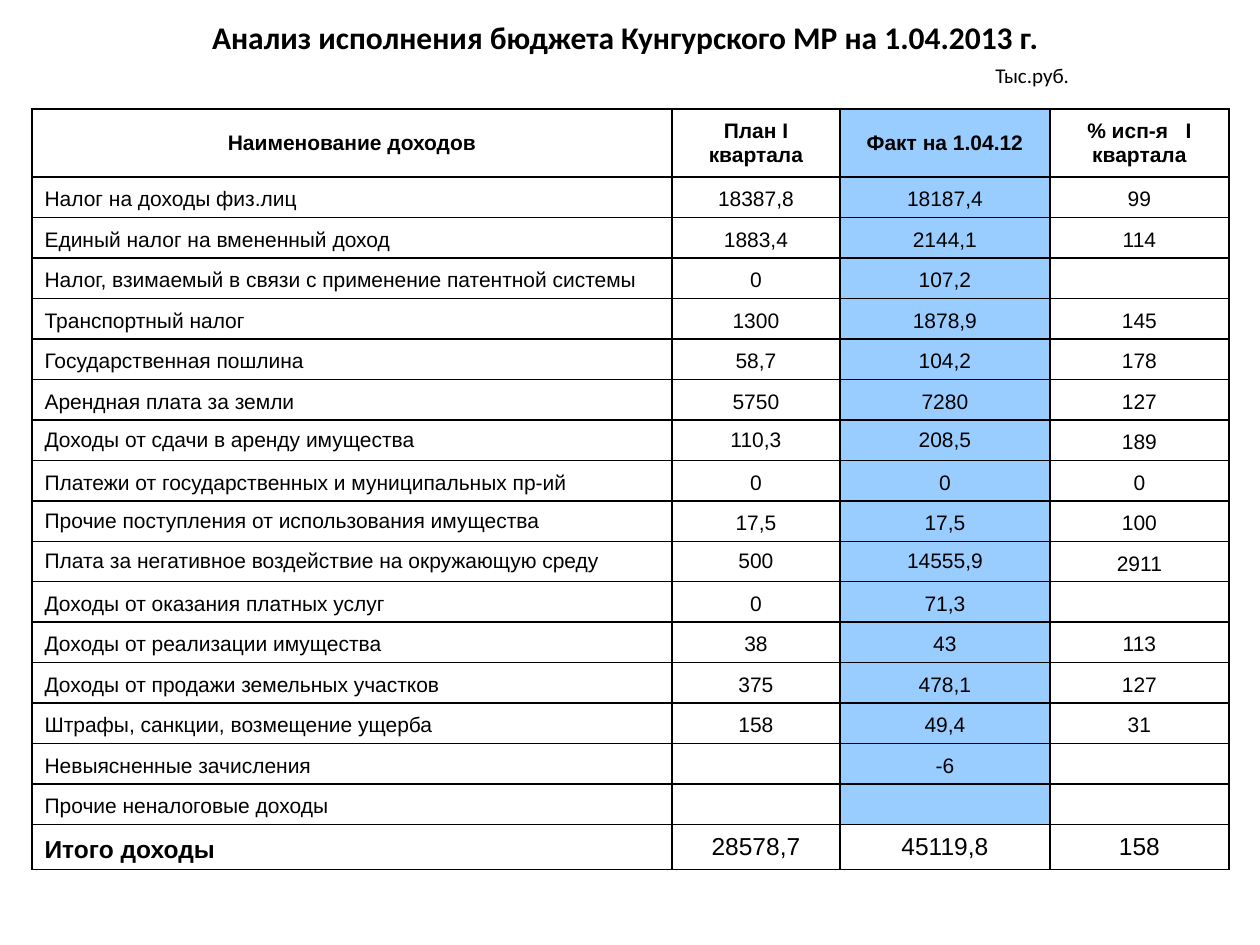
import pptx
import pptx.util
import pptx.dml.color
import pptx.enum.text
import pptx.oxml.ns
import lxml.etree

RGB = pptx.dml.color.RGBColor
BLACK = RGB(0, 0, 0)
WHITE = RGB(255, 255, 255)
BLUE = RGB(0x99, 0xCC, 0xFF)
ALIGN = pptx.enum.text.PP_ALIGN
ANCHOR = pptx.enum.text.MSO_ANCHOR
qn = pptx.oxml.ns.qn

# Content
TITLE = "Анализ исполнения бюджета Кунгурского МР на 1.04.2013 г."
UNIT = "Тыс.руб."
HEAD = ("Наименование доходов", "План I квартала", "Факт на 1.04.12",
        "% исп-я   I квартала")
ITEMS = [
    ("Налог на доходы физ.лиц", "18387,8", "18187,4", "99"),
    ("Единый налог на вмененный доход", "1883,4", "2144,1", "114"),
    ("Налог, взимаемый в связи с применение патентной системы", "0", "107,2", ""),
    ("Транспортный налог", "1300", "1878,9", "145"),
    ("Государственная пошлина", "58,7", "104,2", "178"),
    ("Арендная плата за земли", "5750", "7280", "127"),
    ("Доходы от сдачи в аренду имущества", "110,3", "208,5", "189"),
    ("Платежи от государственных и муниципальных пр-ий", "0", "0", "0"),
    ("Прочие поступления от использования имущества", "17,5", "17,5", "100"),
    ("Плата за негативное воздействие на окружающую среду", "500", "14555,9", "2911"),
    ("Доходы от оказания платных услуг", "0", "71,3", ""),
    ("Доходы от реализации имущества", "38", "43", "113"),
    ("Доходы от продажи земельных участков", "375", "478,1", "127"),
    ("Штрафы, санкции, возмещение ущерба", "158", "49,4", "31"),
    ("Невыясненные зачисления", "", "-6", ""),
    ("Прочие неналоговые доходы", "", "", ""),
]
TOTAL = ("Итого доходы", "28578,7", "45119,8", "158")
ROWS = [HEAD, *ITEMS, TOTAL]
LAST = len(ROWS) - 1
FACT = 2

# Columns whose text is centred vertically, by row; the rest sit at the bottom
MIDDLE = {0: (0, 1, 2, 3), 7: (0, 1, 2), 9: (0,), 10: (0, 1, 2), LAST: (1, 2, 3)}

# Sizes in px
COLS = (640, 168, 210, 179)
HEAD_H, ITEMS_H, TOTAL_H = 68, 648, 45
LEFT, TOP = 32, 109


def emu(px):
    return round(px * 914400 / 126)


def write(para, text, size, **form):
    run = para.add_run()
    run.text = text
    run.font.size = pptx.util.Pt(size)
    run.font.color.rgb = BLACK
    for key, val in form.items():
        setattr(run.font, key, val)


def border(cell):
    props = cell._tc.get_or_add_tcPr()
    for side in ("a:lnL", "a:lnR", "a:lnT", "a:lnB"):
        line = lxml.etree.SubElement(props, qn(side), w="12700")
        fill = lxml.etree.SubElement(line, qn("a:solidFill"))
        lxml.etree.SubElement(fill, qn("a:srgbClr"), val=str(BLACK))


deck = pptx.Presentation()
deck.slide_width, deck.slide_height = emu(1260), emu(945)
slide = deck.slides.add_slide(deck.slide_layouts[6])

# Title and unit of measure
box = slide.shapes.add_textbox(emu(32), 0, emu(1187), emu(105))
frame = box.text_frame
frame.word_wrap = True
frame.vertical_anchor = ANCHOR.MIDDLE
para = frame.paragraphs[0]
para.alignment = ALIGN.CENTER
write(para, TITLE, 18, name="Calibri", bold=True)
para = frame.add_paragraph()
para.space_before = pptx.util.Pt(4)
para._p.get_or_add_pPr().set("marL", str(emu(951)))
write(para, UNIT, 12, name="Calibri", bold=False)

# Income table
table = slide.shapes.add_table(
    len(ROWS), len(COLS), emu(LEFT), emu(TOP),
    emu(sum(COLS)), emu(HEAD_H + ITEMS_H + TOTAL_H)).table
table.first_row = table.horz_banding = False
for col, width in zip(table.columns, COLS):
    col.width = emu(width)
heights = [HEAD_H, *[ITEMS_H / len(ITEMS)] * len(ITEMS), TOTAL_H]
for row, height in zip(table.rows, heights):
    row.height = emu(height)

for r, texts in enumerate(ROWS):
    size = 14 if r == LAST else 12
    for c, text in enumerate(texts):
        cell = table.cell(r, c)
        border(cell)
        cell.fill.solid()
        cell.fill.fore_color.rgb = BLUE if c == FACT and r < LAST else WHITE
        mid = c in MIDDLE.get(r, ())
        cell.vertical_anchor = ANCHOR.MIDDLE if mid else ANCHOR.BOTTOM
        para = cell.text_frame.paragraphs[0]
        para.alignment = ALIGN.LEFT if c == 0 and r > 0 else ALIGN.CENTER
        if text:
            bold = r == 0 or (r == LAST and c == 0)
            write(para, text, size, name="Arial", bold=bold)
        else:
            lxml.etree.SubElement(para._p, qn("a:endParaRPr"), sz=str(size * 100))

deck.save("out.pptx")
